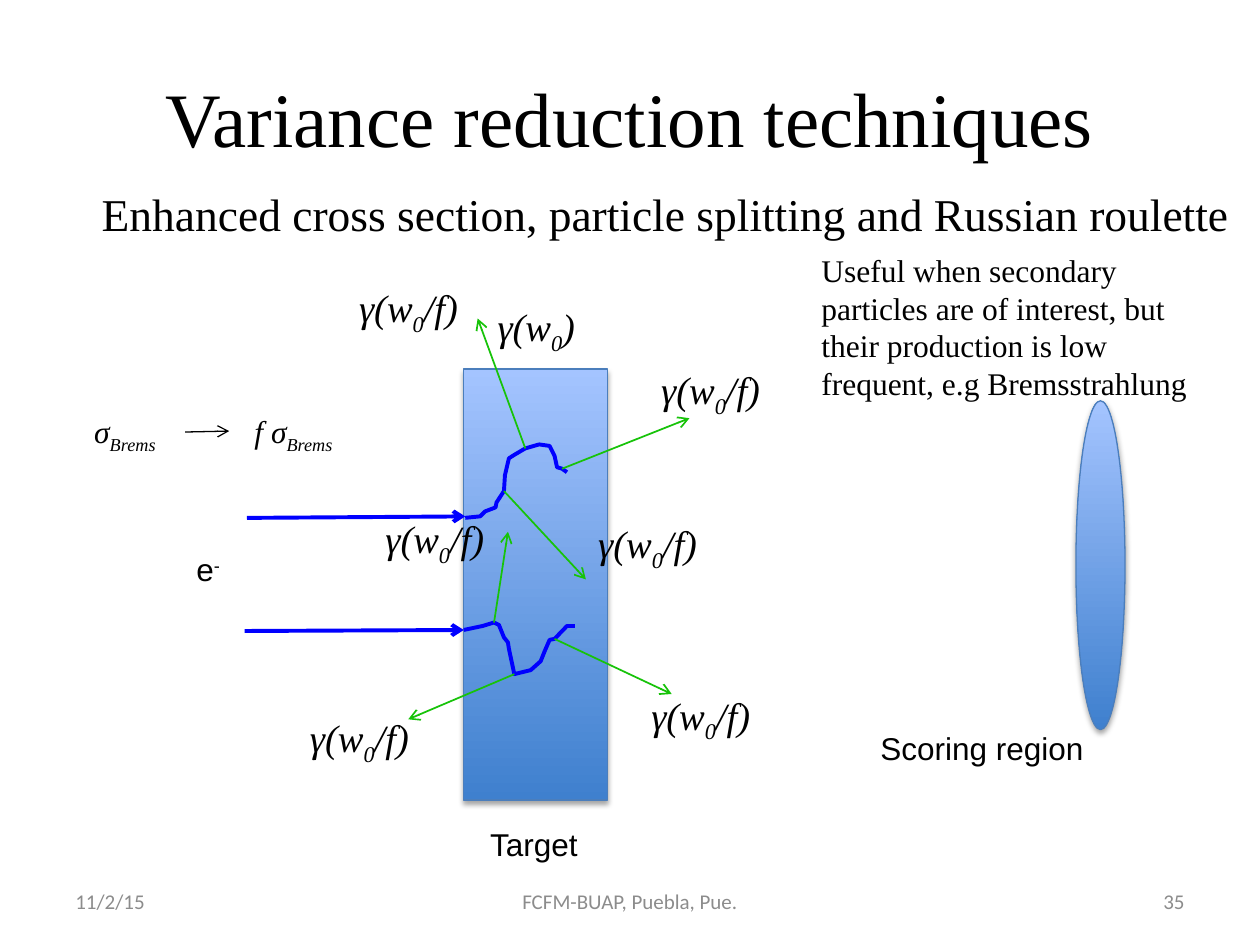
from dataclasses import dataclass

from lxml.etree import SubElement
from pptx import Presentation
from pptx.dml.color import RGBColor
from pptx.enum.shapes import MSO_CONNECTOR, MSO_SHAPE
from pptx.enum.text import MSO_ANCHOR, MSO_AUTO_SIZE, PP_ALIGN
from pptx.oxml.ns import qn
from pptx.util import Cm, Pt

SERIF, SANS, FOOTER_FONT = "Times New Roman", "Arial", "Calibri"
BLACK, GREY = "000000", "8C8C8C"
ELECTRON, PHOTON = "0000FF", "17C309"
GRADIENT_BOTTOM, GRADIENT_TOP, OUTLINE = "3F80CE", "A4C4FF", "4B7EBC"

# Tracks and photons are in cm from the target's top left corner.
UPPER_TRACK = [
    (0.03, 3), (0.33, 2.97), (0.43, 2.87), (0.64, 2.79), (0.66, 2.69),
    (0.81, 2.46), (0.83, 2.14), (0.91, 1.8), (1.02, 1.73), (1.24, 1.6),
    (1.52, 1.52), (1.73, 1.55), (1.78, 1.65), (1.83, 1.75), (1.88, 1.98),
    (1.98, 2.01), (2.08, 2.08),
]
LOWER_TRACK = [
    (0, 5.26), (0.38, 5.18), (0.61, 5.11), (0.71, 5.16), (0.81, 5.41),
    (0.89, 5.51), (0.91, 5.64), (1.02, 6.15), (1.35, 6.07), (1.55, 5.89),
    (1.63, 5.69), (1.73, 5.46), (1.83, 5.44), (2.08, 5.18), (2.24, 5.18),
]
# Start, end, and corner of the weight label
PHOTONS = [
    ((1.24, 1.6), (0.28, -1.02), (-2.36, -1.83)),
    ((0.81, 2.46), (2.46, 4.24), (2.46, 2.92)),
    ((1.98, 2.01), (4.55, 0.99), (3.73, -0.18)),
    ((0.61, 5.11), (0.89, 3.28), (-1.83, 2.82)),
    ((1.02, 6.15), (-1.12, 7.06), (-3.35, 6.83)),
    ((1.83, 5.44), (4.19, 6.55), (3.53, 6.38)),
]


@dataclass
class Box:
    """A region in cm."""
    left: float
    top: float
    width: float
    height: float

    def point(self, offset):
        return Cm(self.left + offset[0]), Cm(self.top + offset[1])

    def inner(self, left, top, width, height):
        return Box(self.left + left, self.top + top, width, height)

    def lengths(self):
        return [Cm(n) for n in (self.left, self.top, self.width, self.height)]


def colour(hex_string):
    return RGBColor.from_string(hex_string)


def write_text(frame, spans, size=18, font=SERIF, fill=BLACK, italic=False,
               align=PP_ALIGN.LEFT):
    """Write a string, or (text, baseline percent) pairs, as one paragraph."""
    para = frame.paragraphs[0]
    para.alignment = align
    for text, baseline in [(spans, 0)] if isinstance(spans, str) else spans:
        span = para.add_run()
        span.text = text
        span.font.size, span.font.name = Pt(size), font
        span.font.italic = italic
        span.font.color.rgb = colour(fill)
        if baseline:
            span._r.get_or_add_rPr().set("baseline", str(baseline * 1000))


def add_text(page, box, spans, wrap=False, middle=False, **style):
    frame = page.shapes.add_textbox(*box.lengths()).text_frame
    frame.word_wrap = wrap
    if middle:
        frame.vertical_anchor = MSO_ANCHOR.MIDDLE
    else:
        frame.auto_size = MSO_AUTO_SIZE.SHAPE_TO_FIT_TEXT
    write_text(frame, spans, **style)


def add_arrow(page, box, start, end, stroke, width):
    arrow = page.shapes.add_connector(
        MSO_CONNECTOR.STRAIGHT, *box.point(start), *box.point(end))
    arrow.line.color.rgb = colour(stroke)
    arrow.line.width = Pt(width)
    properties = arrow._element.spPr
    SubElement(properties.find(qn("a:ln")), qn("a:tailEnd"), type="arrow")
    SubElement(properties, qn("a:effectLst"))


def add_track(page, box, offsets):
    points = [box.point(offset) for offset in offsets]
    builder = page.shapes.build_freeform(*points[0])
    builder.add_line_segments(points[1:], close=False)
    track = builder.convert_to_shape()
    track.shadow.inherit = False
    track.fill.background()
    track.line.color.rgb = colour(ELECTRON)
    track.line.width = Pt(2.25)


def add_solid(page, box, kind):
    """Add a blue gradient shape with a soft shadow below it."""
    solid = page.shapes.add_shape(kind, *box.lengths())
    solid.fill.gradient()
    solid.fill.gradient_angle = 90
    for stop, shade in zip(solid.fill.gradient_stops,
                           (GRADIENT_BOTTOM, GRADIENT_TOP)):
        stop.color.rgb = colour(shade)
    solid.line.color.rgb = colour(OUTLINE)
    solid.line.width = Pt(0.75)
    solid.shadow.inherit = False
    effects = solid._element.spPr.find(qn("a:effectLst"))
    shadow = SubElement(effects, qn("a:outerShdw"), blurRad=str(Pt(3.1)),
                        dist=str(Pt(1.8)), dir="5400000", rotWithShape="0")
    shade = SubElement(shadow, qn("a:srgbClr"), val=BLACK)
    SubElement(shade, qn("a:alpha"), val="35000")


def add_headings(page, box):
    title = page.shapes.title
    title.left, title.top, title.width, title.height = box.lengths()
    write_text(title.text_frame, "Variance reduction techniques", size=44,
               align=PP_ALIGN.CENTER)
    add_text(page, box.inner(0.53, 2.87, 23.6, 1.37),
             "Enhanced cross section, particle splitting and Russian roulette",
             size=26, wrap=True)
    add_text(page, box.inner(15.04, 4.17, 8.61, 3.33),
             "Useful when secondary particles are of interest, but their "
             "production is low frequent, e.g Bremsstrahlung", wrap=True)


def add_target(page, box):
    add_solid(page, box, MSO_SHAPE.RECTANGLE)
    for start, end, track in (((-4.37, 3), (0.03, 2.97), UPPER_TRACK),
                              ((-4.42, 5.28), (0, 5.26), LOWER_TRACK)):
        add_arrow(page, box, start, end, ELECTRON, 2.25)
        add_track(page, box, track)
    for start, end, corner in PHOTONS:
        add_arrow(page, box, start, end, PHOTON, 1)
        add_text(page, box.inner(*corner, 2.95, 1.19),
                 [("γ(w", 0), ("0", -25), ("/f)", 0)], size=22, italic=True)
    add_text(page, box.inner(0.43, -1.45, 2.51, 1.19),
             [("γ(w", 0), ("0", -25), (")", 0)], size=22, italic=True)
    add_text(page, box.inner(-5.64, 3.53, 1.02, 1.02),
             [("e", 0), ("-", 30)], font=SANS)
    add_text(page, box.inner(0.28, 9.07, 2.29, 1.02), "Target", font=SANS)


def add_scoring_region(page, box):
    add_solid(page, box, MSO_SHAPE.OVAL)
    add_text(page, box.inner(-4.19, 6.5, 4.65, 1.02), "Scoring region",
             font=SANS)


def add_cross_section(page, box):
    for left, width, symbol in ((0, 2.08, "σ"), (3.23, 2.41, "f σ")):
        add_text(page, box.inner(left, 0, width, box.height),
                 [(symbol, 0), ("Brems", -25)], italic=True)
    add_arrow(page, box, (2.08, 0.53), (2.97, 0.51), BLACK, 0.75)


def add_footer(page, box):
    side, centre = 5.93, 8.04
    for left, width, text, align in (
            (0, side, "11/2/15", PP_ALIGN.LEFT),
            ((box.width - centre) / 2, centre, "FCFM-BUAP, Puebla, Pue.",
             PP_ALIGN.CENTER),
            (box.width - side, side, "35", PP_ALIGN.RIGHT)):
        add_text(page, box.inner(left, 0, width, box.height), text, wrap=True,
                 middle=True, size=12, font=FOOTER_FONT, fill=GREY,
                 align=align)


def main():
    deck = Presentation()
    deck.slide_width, deck.slide_height = Cm(25.4), Cm(19.05)
    page = deck.slides.add_slide(deck.slide_layouts.get_by_name("Title Only"))
    add_headings(page, Box(1.27, 0.76, 22.86, 3.18))
    add_target(page, Box(9.35, 7.44, 2.9, 8.69))
    add_scoring_region(page, Box(21.69, 8.08, 0.99, 6.63))
    add_cross_section(page, Box(1.65, 8.18, 5.64, 1.02))
    add_footer(page, Box(1.27, 17.65, 22.86, 1.02))
    deck.save("out.pptx")


if __name__ == "__main__":
    main()
